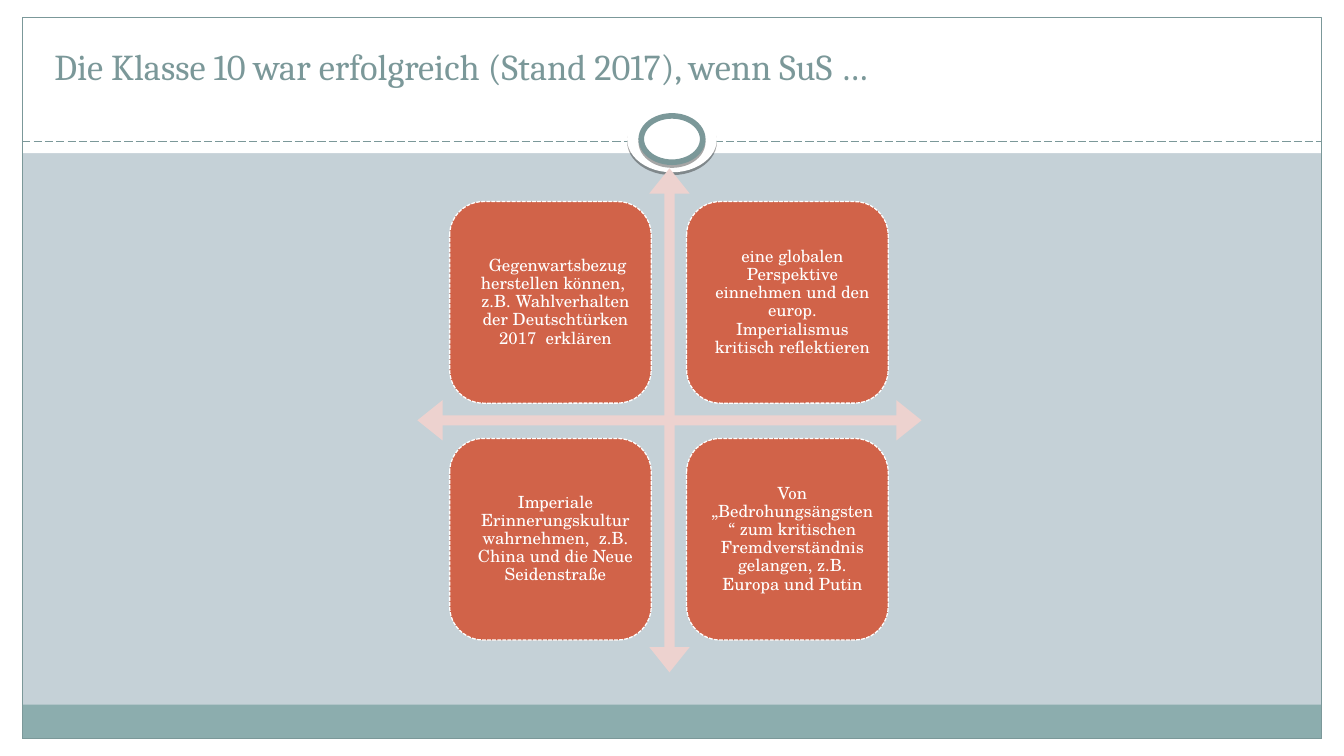
from itertools import product

from lxml import etree
from pptx import Presentation
from pptx.dml.color import RGBColor
from pptx.enum.dml import MSO_LINE
from pptx.enum.shapes import MSO_CONNECTOR, MSO_SHAPE
from pptx.enum.text import MSO_ANCHOR, PP_ALIGN
from pptx.oxml.ns import qn
from pptx.util import Emu, Pt

WHITE = RGBColor(0xFF, 0xFF, 0xFF)
BACKGROUND = RGBColor(0xC5, 0xD1, 0xD7)
TEAL = RGBColor(0x7B, 0x98, 0x99)
FOOTER = RGBColor(0x8C, 0xAD, 0xAE)
ARROW = RGBColor(0xED, 0xD2, 0xCF)
CARD = RGBColor(0xD1, 0x63, 0x49)

WIDTH, HEIGHT = 1333, 750
MARGIN = 22
CARD_SIZE, CARD_STEP = 200, 235
CARD_LEFT, CARD_TOP = 446, 200

CRITERIA = [
    " Gegenwartsbezug herstellen können,  z.B. Wahlverhalten der Deutschtürken 2017  erklären",
    "eine globalen Perspektive einnehmen und den europ. Imperialismus kritisch reflektieren",
    "Imperiale Erinnerungskultur wahrnehmen,  z.B. China und die Neue Seidenstraße",
    "Von „Bedrohungsängsten“ zum kritischen Fremdverständnis gelangen, z.B. Europa und Putin",
]


def px(n):
    """Convert px (100 to the inch) to EMU."""
    return Emu(n * 9144)


class SlideBuilder:
    title_font = "Cambria"
    body_font = "TeX Gyre Schola"

    def __init__(self, prs):
        self.slide = prs.slides.add_slide(prs.slide_layouts[6])
        fill = self.slide.background.fill
        fill.solid()
        fill.fore_color.rgb = BACKGROUND

    def shape(self, kind, box, fill=None, line=None, weight=0.75, adjustments=()):
        sp = self.slide.shapes.add_shape(kind, *map(px, box))
        sp.shadow.inherit = False
        for i, value in enumerate(adjustments):
            sp.adjustments[i] = value
        if fill is None:
            sp.fill.background()
        else:
            sp.fill.solid()
            sp.fill.fore_color.rgb = fill
        if line is None:
            sp.line.fill.background()
        else:
            sp.line.color.rgb = line
            sp.line.width = Pt(weight)
        return sp

    def rect(self, box, fill=None, line=None):
        return self.shape(MSO_SHAPE.RECTANGLE, box, fill, line)

    def ring(self, box, line=None):
        """Add a white ellipse with a hard shadow just below it."""
        sp = self.shape(MSO_SHAPE.OVAL, box, WHITE, line, 4)
        effects = sp._element.spPr.find(qn("a:effectLst"))
        shadow = etree.SubElement(effects, qn("a:outerShdw"), blurRad="0",
                                  dist=str(Pt(2)), dir="5400000", rotWithShape="0")
        color = etree.SubElement(shadow, qn("a:srgbClr"), val="000000")
        etree.SubElement(color, qn("a:alpha"), val="35000")

    def dashed_line(self, x1, y1, x2, y2):
        line = self.slide.shapes.add_connector(
            MSO_CONNECTOR.STRAIGHT, *map(px, (x1, y1, x2, y2)))
        line.line.color.rgb = TEAL
        line.line.width = Pt(0.75)
        line.line.dash_style = MSO_LINE.LONG_DASH
        etree.SubElement(line._element.spPr, qn("a:effectLst"))

    def set_text(self, tf, text, font, size, color, anchor, insets):
        tf.word_wrap = True
        tf.vertical_anchor = anchor
        tf.margin_left, tf.margin_top, tf.margin_right, tf.margin_bottom = map(px, insets)
        p = tf.paragraphs[0]
        p.text = text
        r = p.runs[0]
        r.font.name, r.font.size = font, Pt(size)
        r.font.color.rgb = color
        return p

    def title(self, box, text):
        sp = self.slide.shapes.add_textbox(*map(px, box))
        self.set_text(sp.text_frame, text, self.title_font, 26, TEAL,
                      MSO_ANCHOR.BOTTOM, (10, 5, 10, 5))

    def card(self, box, text):
        sp = self.shape(MSO_SHAPE.ROUNDED_RECTANGLE, box, CARD, WHITE, 0.91, [0.167])
        sp.line.dash_style = MSO_LINE.SQUARE_DOT
        p = self.set_text(sp.text_frame, text, self.body_font, 12, WHITE,
                          MSO_ANCHOR.MIDDLE, (15, 15, 5, 15))
        p.alignment = PP_ALIGN.CENTER
        p.line_spacing = 0.9
        p.space_after = Pt(4.2)


def main():
    prs = Presentation()
    prs.slide_width, prs.slide_height = px(WIDTH), px(HEIGHT)
    s = SlideBuilder(prs)

    inner = WIDTH - 2 * MARGIN
    for box in [(0, 733, WIDTH, 17), (0, 0, WIDTH, 152),
                (0, 0, MARGIN, HEIGHT), (WIDTH - MARGIN, 0, MARGIN, HEIGHT)]:
        s.rect(box, WHITE)
    s.rect((MARGIN, 699, inner, 34), FOOTER)
    s.rect((MARGIN, 17, inner, 716), line=TEAL)
    s.dashed_line(MARGIN, 140, WIDTH - MARGIN, 140)
    s.ring((622, 105, 89, 66))
    s.ring((636, 115, 61, 46), TEAL)

    s.title((44, 25, 1244, 67), "Die Klasse 10 war erfolgreich (Stand 2017), wenn SuS …")
    s.shape(MSO_SHAPE.QUAD_ARROW, (414, 167, 500, 500), ARROW,
            adjustments=(0.02, 0.04, 0.05))
    for (row, col), text in zip(product(range(2), repeat=2), CRITERIA):
        s.card((CARD_LEFT + col * CARD_STEP, CARD_TOP + row * CARD_STEP,
                CARD_SIZE, CARD_SIZE), text)

    prs.save("out.pptx")


if __name__ == "__main__":
    main()
